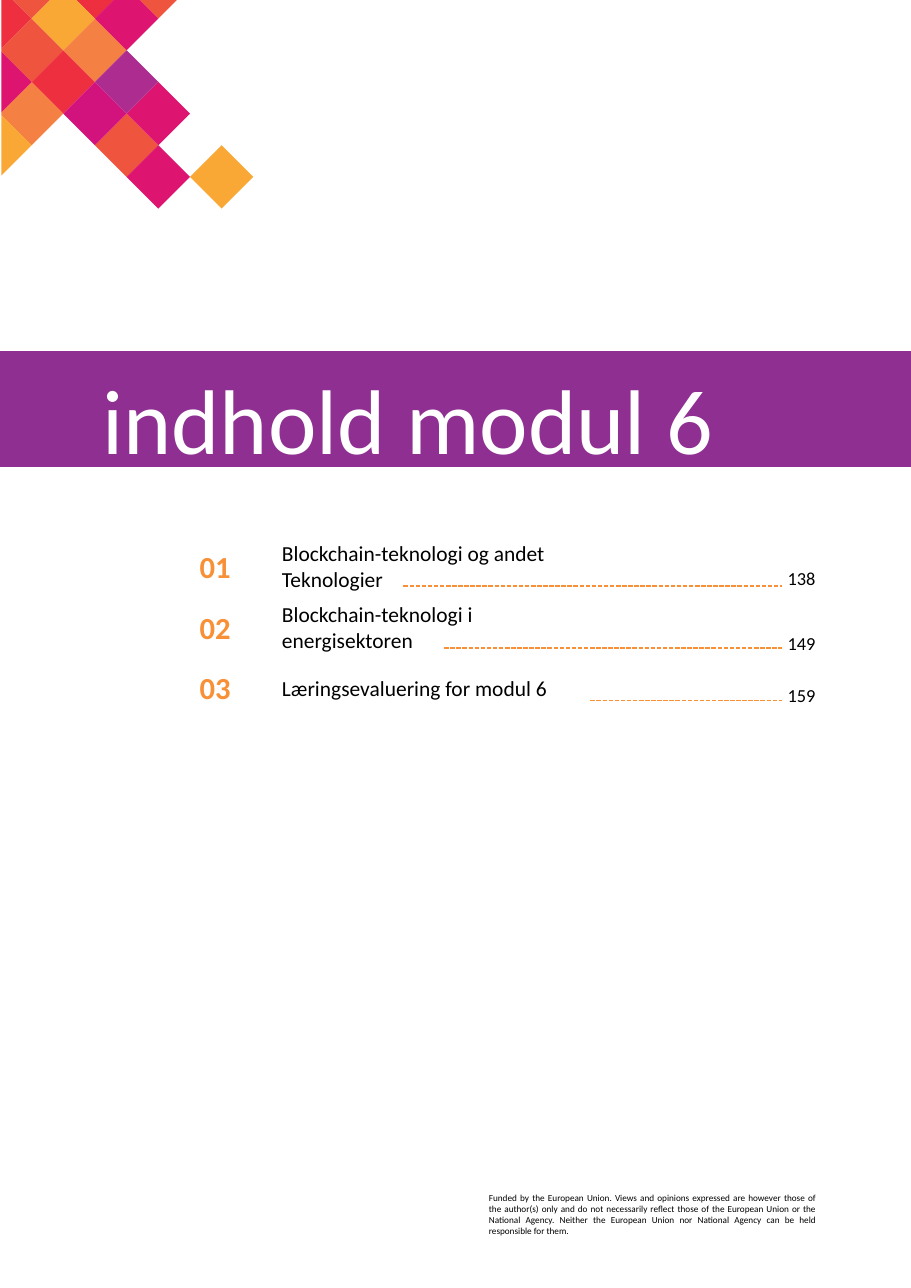
from dataclasses import dataclass
from lxml.etree import SubElement
from pptx import Presentation
from pptx.dml.color import RGBColor
from pptx.enum.dml import MSO_LINE
from pptx.enum.shapes import MSO_CONNECTOR, MSO_SHAPE
from pptx.enum.text import MSO_ANCHOR, PP_ALIGN
from pptx.oxml.ns import qn
from pptx.util import Cm, Pt


@dataclass(frozen=True)
class Theme:
    font: str = "Calibri"
    band: str = "8E2F91"
    accent: str = "F79037"
    text: str = "000000"
    light: str = "FFFFFF"
    red: str = "ED2F40"
    coral: str = "EF543F"
    orange: str = "F48043"
    amber: str = "F9A835"
    pink: str = "DD1470"
    magenta: str = "D3137D"
    purple: str = "AC2C90"
    title_size: int = 60
    number_size: int = 20
    topic_size: int = 14
    page_size: int = 12
    footer_size: int = 6


THEME = Theme()
STEP = 0.73
FIRST_ROW = 0.43
CLIP = (0.03, 0)
MOSAIC = {
    THEME.red: [(3, -1), (2, 2), (0, 0)],
    THEME.coral: [(5, -1), (1, 1), (4, 4), (1, -1)],
    THEME.orange: [(3, 1), (1, 3)],
    THEME.amber: [(2, 0), (0, 4), (7, 5)],
    THEME.pink: [(4, 0), (0, 2), (5, 5), (5, 3)],
    THEME.magenta: [(3, 3)],
    THEME.purple: [(4, 2)],
}
ENTRIES = [
    (["Blockchain-teknologi og andet", "Teknologier"], "138", 12.85, 9.3, 13.51),
    (["Blockchain-teknologi i", "energisektoren"], "149", 14.35, 10.24, 14.94),
    (["Læringsevaluering for modul 6"], "159", 15.54, 13.61, 16.15),
]
FOOTER = (
    "Funded by the European Union. Views and opinions expressed are however "
    "those of the author(s) only and do not necessarily reflect those of the "
    "European Union or the National Agency. Neither the European Union nor "
    "National Agency can be held responsible for them."
)


def apply(target, values):
    for name, value in values.items():
        setattr(target, name, value)


def paint(sp, color):
    sp.shadow.inherit = False
    sp.fill.solid()
    sp.fill.fore_color.rgb = RGBColor.from_string(color)
    sp.line.fill.background()


def add_band(s, left, top, width, height, color):
    sp = s.shapes.add_shape(
        MSO_SHAPE.RECTANGLE, Cm(left), Cm(top), Cm(width), Cm(height)
    )
    paint(sp, color)


def add_text(s, box, lines, size, color=THEME.text, bold=False,
             align=PP_ALIGN.LEFT, anchor=MSO_ANCHOR.MIDDLE):
    tf = s.shapes.add_textbox(*map(Cm, box)).text_frame
    apply(tf, {"word_wrap": True, "vertical_anchor": anchor})
    for i, line in enumerate(lines):
        p = tf.add_paragraph() if i else tf.paragraphs[0]
        p.alignment = align
        r = p.add_run()
        r.text = line
        apply(r.font, {"name": THEME.font, "size": Pt(size), "bold": bold})
        r.font.color.rgb = RGBColor.from_string(color)


def add_leader(s, left, right, y):
    line = s.shapes.add_connector(
        MSO_CONNECTOR.STRAIGHT, Cm(left), Cm(y), Cm(right), Cm(y)
    )
    line.line.color.rgb = RGBColor.from_string(THEME.accent)
    apply(line.line, {"width": Pt(1), "dash_style": MSO_LINE.SQUARE_DOT})
    SubElement(line._element.spPr, qn("a:effectLst"))


def clip(points, axis, limit):
    kept = []
    for a, b in zip(points, points[1:] + points[:1]):
        if a[axis] >= limit:
            kept.append(a)
        if (a[axis] - limit) * (b[axis] - limit) < 0:
            t = (limit - a[axis]) / (b[axis] - a[axis])
            kept.append(tuple(m + t * (n - m) for m, n in zip(a, b)))
    return kept


def add_diamond(s, col, row, color):
    x, y = col * STEP, FIRST_ROW + row * STEP
    points = [(x, y - STEP), (x + STEP, y), (x, y + STEP), (x - STEP, y)]
    for axis, limit in enumerate(CLIP):
        points = clip(points, axis, limit)
    points = [(Cm(px), Cm(py)) for px, py in points]
    outline = s.shapes.build_freeform(*points[0])
    outline.add_line_segments(points[1:])
    paint(outline.convert_to_shape(), color)


def add_entry(s, index, topic, page, page_top, leader_left, leader_y):
    top = 12.57 + 1.4 * index
    add_text(s, (4.06, top, 1.8, 0.97), [f"{index + 1:02}"], THEME.number_size,
             THEME.accent, bold=True, align=PP_ALIGN.CENTER)
    add_text(s, (6.25, top, 10, 0.97), topic, THEME.topic_size)
    add_text(s, (17.78, page_top, 1.27, 0.97), [page], THEME.page_size,
             align=PP_ALIGN.RIGHT)
    add_leader(s, leader_left, 18.03, leader_y)


def main():
    prs = Presentation()
    apply(prs, {"slide_width": Cm(21), "slide_height": Cm(29.7)})
    s = prs.slides.add_slide(prs.slide_layouts[6])
    add_band(s, 0, 8.1, 21, 2.67, THEME.band)
    add_text(s, (11.02, 27.36, 8.03, 1.27), [FOOTER], THEME.footer_size,
             align=PP_ALIGN.JUSTIFY, anchor=MSO_ANCHOR.TOP)
    for color, cells in MOSAIC.items():
        for col, row in cells:
            add_diamond(s, col, row, color)
    for index, entry in enumerate(ENTRIES):
        add_entry(s, index, *entry)
    add_text(s, (2.11, 8.23, 17.78, 2.69), ["indhold modul 6"], THEME.title_size,
             THEME.light, anchor=MSO_ANCHOR.TOP)
    prs.save("out.pptx")


if __name__ == "__main__":
    main()
